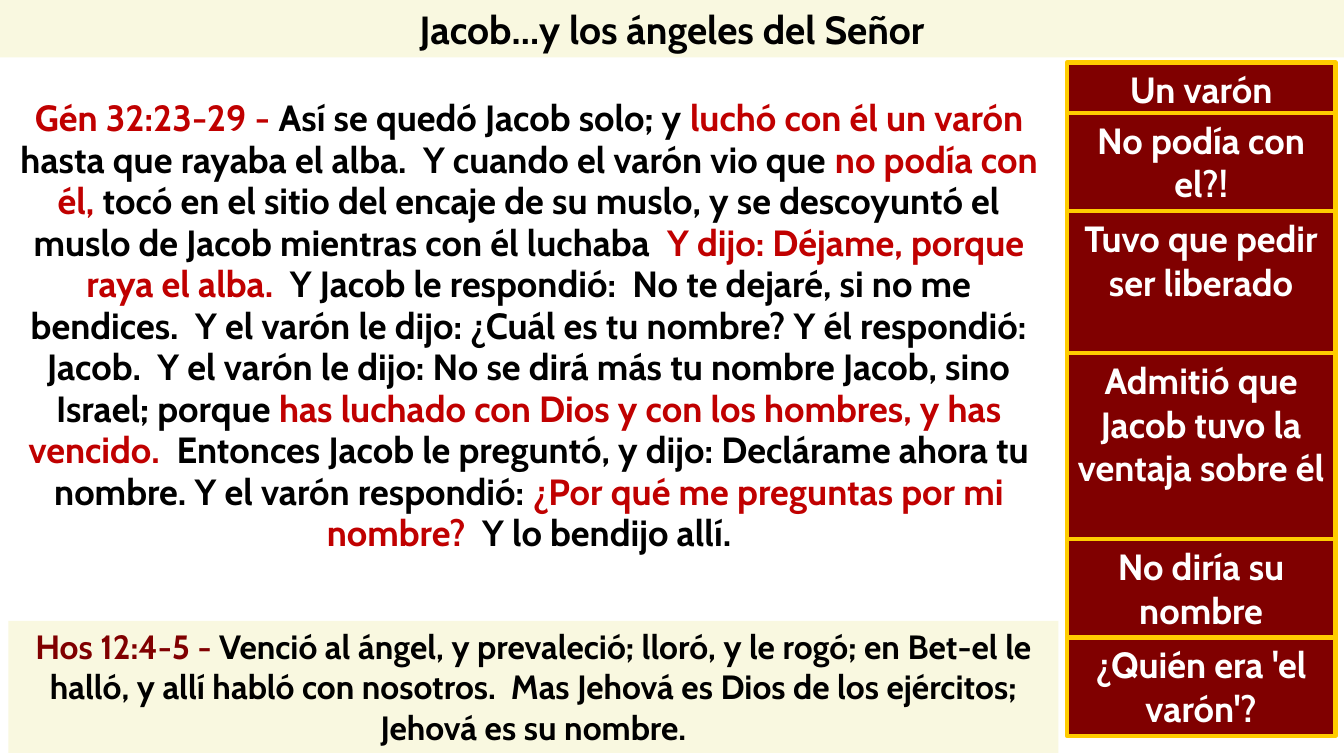
from typing import NamedTuple

from pptx import Presentation
from pptx.dml.color import RGBColor
from pptx.enum.shapes import MSO_SHAPE
from pptx.enum.text import MSO_ANCHOR, MSO_AUTO_SIZE, PP_ALIGN
from pptx.util import Inches, Pt

RECT = MSO_SHAPE.RECTANGLE
CENTER = PP_ALIGN.CENTER
TOP = MSO_ANCHOR.TOP
GROW = MSO_AUTO_SIZE.SHAPE_TO_FIT_TEXT

FONT = "Cabin"
BLACK, WHITE, RED = "000000", "FFFFFF", "C00000"
MAROON, GOLD, CREAM = "800000", "FFCC00", "F9F8E0"

# Grid: 160 columns across, 750 rows down
COLS, ROWS = 160, 750
FIRST_TOP, SECOND_TOP = 62, 112
LINE_ROWS, PAD_ROWS = 43.5, 10.5


class Area(NamedTuple):
    col: float
    row: float
    cols: float
    rows: float


class Run(NamedTuple):
    text: str
    color: str = BLACK


class Note(NamedTuple):
    text: str
    lines: int


TITLE = [Run("Jacob…y los ángeles del Señor")]
GENESIS = [
    Run("Gén 32:23-29 - ", RED),
    Run("Así se quedó Jacob solo; y "),
    Run("luchó con él un varón", RED),
    Run(" hasta que rayaba el alba.  Y cuando el varón vio que "),
    Run("no podía con él, ", RED),
    Run("tocó en el sitio del encaje de su muslo, y se descoyuntó el "
        "muslo de Jacob mientras con él luchaba  "),
    Run("Y dijo: Déjame, porque raya el alba.  ", RED),
    Run("Y Jacob le respondió:  No te dejaré, si no me bendices.  "
        "Y el varón le dijo: ¿Cuál es tu nombre? Y él respondió: Jacob.  "
        "Y el varón le dijo: No se dirá más tu nombre Jacob, sino Israel; porque "),
    Run("has luchado con Dios y con los hombres, y has vencido.  ", RED),
    Run("Entonces Jacob le preguntó, y dijo: Declárame ahora tu nombre. "
        "Y el varón respondió: "),
    Run("¿Por qué me preguntas por mi nombre?  ", RED),
    Run("Y lo bendijo allí."),
]
HOSEA = [
    Run("Hos 12:4-5 - ", MAROON),
    Run("Venció al ángel, y prevaleció; lloró, y le rogó; en Bet-el le halló, "
        "y allí habló con nosotros.  Mas Jehová es Dios de los ejércitos; "
        "Jehová es su nombre."),
]
NOTES = [
    Note("Un varón", 1),
    Note("No podía con el?!", 2),
    Note("Tuvo que pedir ser liberado", 3),
    Note("Admitió que Jacob tuvo la ventaja sobre él", 4),
    Note("No diría su nombre", 2),
    Note("¿Quién era 'el varón'?", 2),
]


def rgb(value: str) -> RGBColor:
    return RGBColor.from_string(value)


def place(area: Area) -> tuple:
    return (round(prs.slide_width * area.col / COLS),
            round(prs.slide_height * area.row / ROWS),
            round(prs.slide_width * area.cols / COLS),
            round(prs.slide_height * area.rows / ROWS))


def write(sp, runs: list[Run], *, size: float, spacing: float = 1.0) -> None:
    tf = sp.text_frame
    tf.word_wrap = True
    tf.auto_size = GROW
    tf.vertical_anchor = TOP
    p = tf.paragraphs[0]
    p.alignment = CENTER
    p.line_spacing = spacing
    for run in runs:
        r = p.add_run()
        r.text = run.text
        r.font.name = FONT
        r.font.size = Pt(size)
        r.font.bold = True
        r.font.color.rgb = rgb(run.color)


def panel(area: Area, runs: list[Run], *, fill: str, size: float,
          line: str | None = None) -> None:
    sp = s.shapes.add_shape(RECT, *place(area))
    sp.shadow.inherit = False
    sp.fill.solid()
    sp.fill.fore_color.rgb = rgb(fill)
    if line:
        sp.line.color.rgb = rgb(line)
        sp.line.width = Pt(3)
    else:
        sp.line.fill.background()
    write(sp, runs, size=size)


prs = Presentation()
prs.slide_width, prs.slide_height = Inches(13.33), Inches(7.5)
s = prs.slides.add_slide(prs.slide_layouts[6])

# Main passage
passage = s.shapes.add_textbox(*place(Area(0, 93, 126, 509)))
write(passage, GENESIS, size=26, spacing=0.95)

# Title band
panel(Area(0, 0, COLS, 57), TITLE, fill=CREAM, size=28)

# Side notes, each as tall as its number of lines
top = FIRST_TOP
for i, note in enumerate(NOTES):
    height = PAD_ROWS + LINE_ROWS * note.lines
    panel(Area(127, top, 32, height), [Run(note.text, WHITE)],
          fill=MAROON, size=26, line=GOLD)
    top = SECOND_TOP if i == 0 else top + height

# Second passage
panel(Area(1, 616, 125, 131), HOSEA, fill=CREAM, size=24)

prs.save("out.pptx")
